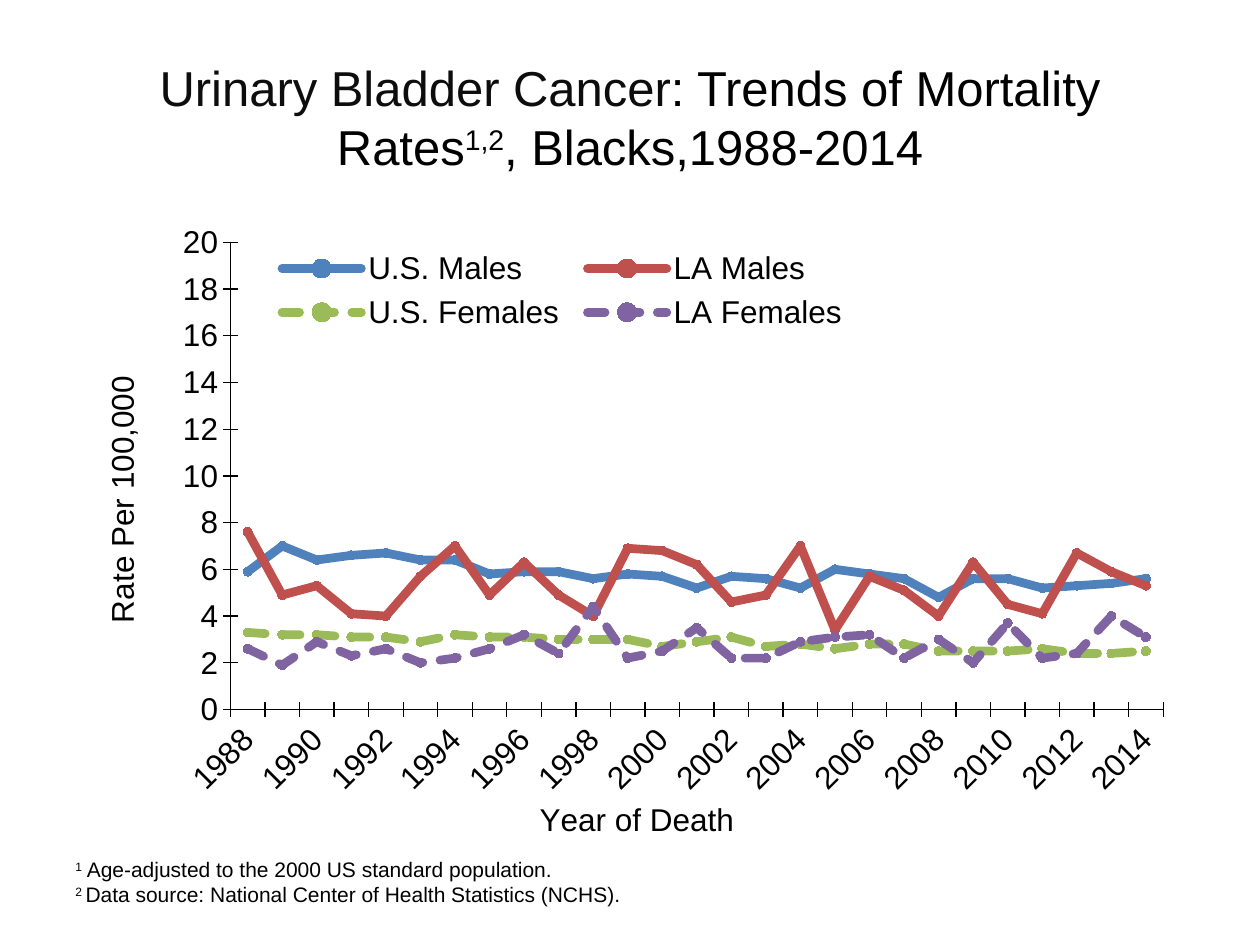
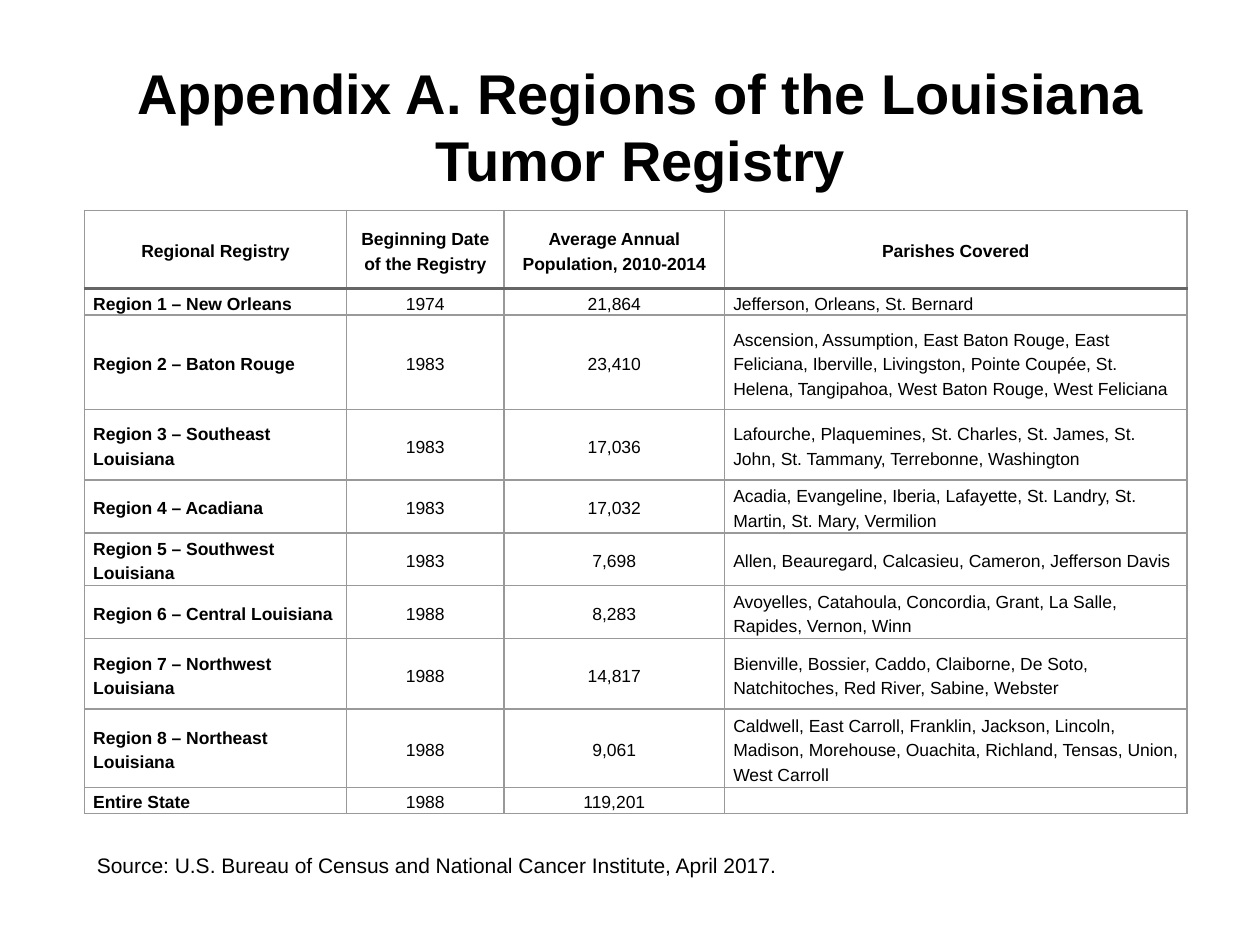
from lxml import etree
from pptx import Presentation
from pptx.chart.data import CategoryChartData
from pptx.dml.color import RGBColor
from pptx.enum.chart import XL_CHART_TYPE, XL_LEGEND_POSITION, XL_MARKER_STYLE, XL_TICK_MARK
from pptx.enum.dml import MSO_LINE
from pptx.enum.text import MSO_ANCHOR, MSO_AUTO_SIZE, PP_ALIGN
from pptx.oxml.ns import qn
from pptx.util import Inches, Pt

LINE_MARKERS = XL_CHART_TYPE.LINE_MARKERS
LEGEND_BOTTOM = XL_LEGEND_POSITION.BOTTOM
CIRCLE = XL_MARKER_STYLE.CIRCLE
CROSS = XL_TICK_MARK.CROSS
DASH = MSO_LINE.SQUARE_DOT
MIDDLE = MSO_ANCHOR.MIDDLE
NO_AUTOFIT = MSO_AUTO_SIZE.NONE
LEFT, CENTER = PP_ALIGN.LEFT, PP_ALIGN.CENTER

FONT = "Arial"
COLORS = {
    "text": "000000",
    "title_lead": "0D0D0D",
    "border": "999999",
    "header_rule": "666666",
    "us_males": "4F81BD",
    "la_males": "C0504D",
    "us_females": "9BBB59",
    "la_females": "8064A2",
}

YEARS = [str(year) for year in range(1988, 2015)]
RATES = [
    ("U.S. Males", "us_males", False,
     [5.9, 7, 6.4, 6.6, 6.7, 6.4, 6.4, 5.8, 5.9, 5.9, 5.6, 5.8, 5.7, 5.2,
      5.7, 5.6, 5.2, 6, 5.8, 5.6, 4.8, 5.6, 5.6, 5.2, 5.3, 5.4, 5.6]),
    ("LA Males", "la_males", False,
     [7.6, 4.9, 5.3, 4.1, 4, 5.7, 7, 4.9, 6.3, 4.9, 4, 6.9, 6.8, 6.2,
      4.6, 4.9, 7, 3.4, 5.7, 5.1, 4, 6.3, 4.5, 4.1, 6.7, 5.9, 5.3]),
    ("U.S. Females", "us_females", True,
     [3.3, 3.2, 3.2, 3.1, 3.1, 2.9, 3.2, 3.1, 3.1, 3, 3, 3, 2.7, 2.9,
      3.1, 2.7, 2.8, 2.6, 2.8, 2.8, 2.5, 2.5, 2.5, 2.6, 2.4, 2.4, 2.5]),
    ("LA Females", "la_females", True,
     [2.6, 1.9, 2.9, 2.3, 2.6, 2, 2.2, 2.6, 3.2, 2.4, 4.4, 2.2, 2.5, 3.5,
      2.2, 2.2, 2.9, 3.1, 3.2, 2.2, 3, 2, 3.7, 2.2, 2.4, 4, 3.1]),
]

COLUMN_WIDTHS = [2.08, 1.25, 1.75, 3.67]
ROW_HEIGHTS = [0.62, 0.21, 0.75, 0.56, 0.42, 0.42, 0.42, 0.56, 0.62, 0.21]
REGISTRIES = [
    ("Regional Registry", "Beginning Date of the Registry",
     "Average Annual Population, 2010-2014", "Parishes Covered"),
    ("Region 1 – New Orleans", "1974", "21,864", "Jefferson, Orleans, St. Bernard"),
    ("Region 2 – Baton Rouge", "1983", "23,410",
     "Ascension, Assumption, East Baton Rouge, East Feliciana, Iberville, Livingston, "
     "Pointe Coupée, St. Helena, Tangipahoa, West Baton Rouge, West Feliciana"),
    ("Region 3 – Southeast Louisiana", "1983", "17,036",
     "Lafourche, Plaquemines, St. Charles, St. James, St. John, St. Tammany, "
     "Terrebonne, Washington"),
    ("Region 4 – Acadiana", "1983", "17,032",
     "Acadia, Evangeline, Iberia, Lafayette, St. Landry, St. Martin, St. Mary, Vermilion"),
    ("Region 5 – Southwest Louisiana", "1983", "7,698",
     "Allen, Beauregard, Calcasieu, Cameron, Jefferson Davis"),
    ("Region 6 – Central Louisiana", "1988", "8,283",
     "Avoyelles, Catahoula, Concordia, Grant, La Salle, Rapides, Vernon, Winn"),
    ("Region 7 – Northwest Louisiana", "1988", "14,817",
     "Bienville, Bossier, Caddo, Claiborne, De Soto, Natchitoches, Red River, Sabine, Webster"),
    ("Region 8 – Northeast Louisiana", "1988", "9,061",
     "Caldwell, East Carroll, Franklin, Jackson, Lincoln, Madison, Morehouse, Ouachita, "
     "Richland, Tensas, Union, West Carroll"),
    ("Entire State", "1988", "119,201", ""),
]


def rgb(name):
    return RGBColor.from_string(COLORS[name])


def style_font(font, size, bold=False, color="text"):
    font.name = FONT
    font.size = Pt(size)
    font.bold = bold
    font.color.rgb = rgb(color)


def add_runs(paragraph, parts, size, bold=False):
    for text, color, raised in parts:
        run = paragraph.add_run()
        run.text = text
        style_font(run.font, size, bold, color)
        if raised:
            run.font._element.set("baseline", "30000")


def set_title(slide, box, parts, size, bold=False):
    title = slide.shapes.title
    title.left, title.top, title.width, title.height = map(Inches, box)
    frame = title.text_frame
    frame.auto_size = NO_AUTOFIT
    frame.vertical_anchor = MIDDLE
    frame.paragraphs[0].alignment = CENTER
    add_runs(frame.paragraphs[0], parts, size, bold)


def add_note(slide, box, lines, line_spacing=1.0):
    frame = slide.shapes.add_textbox(*map(Inches, box)).text_frame
    frame.word_wrap = True
    for index, parts in enumerate(lines):
        paragraph = frame.add_paragraph() if index else frame.paragraphs[0]
        paragraph.line_spacing = line_spacing
        add_runs(paragraph, parts, 12)


def place_chart_part(element, index, x, y, size=None, inner=False):
    for previous in element.findall(qn("c:layout")):
        element.remove(previous)
    layout = etree.Element(qn("c:layout"))
    manual = etree.SubElement(layout, qn("c:manualLayout"))
    settings = [("layoutTarget", "inner")] if inner else []
    settings += [("xMode", "edge"), ("yMode", "edge"), ("x", x), ("y", y)]
    if size:
        settings += [("w", size[0]), ("h", size[1])]
    for name, value in settings:
        etree.SubElement(manual, qn(f"c:{name}")).set("val", str(value))
    element.insert(index, layout)


def format_axis(axis, title, x, y):
    axis.has_major_gridlines = False
    axis.major_tick_mark = CROSS
    axis.format.line.color.rgb = rgb("text")
    axis.format.line.width = Pt(0.75)
    style_font(axis.tick_labels.font, 18)
    frame = axis.axis_title.text_frame
    frame.text = title
    style_font(frame.paragraphs[0].runs[0].font, 18)
    place_chart_part(axis.axis_title._element, 1, x, y)


def format_series(series, color, dashed):
    series.smooth = False
    line = series.format.line
    line.color.rgb = rgb(color)
    line.width = Pt(5)
    if dashed:
        line.dash_style = DASH
    series._element.spPr.find(qn("a:ln")).set("cap", "rnd")
    marker = series.marker
    marker.style = CIRCLE
    marker.size = 5
    marker.format.fill.solid()
    marker.format.fill.fore_color.rgb = rgb(color)
    marker.format.line.color.rgb = rgb(color)


def add_rate_chart(slide, box):
    data = CategoryChartData(number_format="General")
    data.categories = YEARS
    for name, _, _, rates in RATES:
        data.add_series(name, rates)
    chart = slide.shapes.add_chart(LINE_MARKERS, *map(Inches, box), data).chart
    chart.has_title = False
    style_font(chart.font, 18)
    plot = chart.plots[0]
    plot.vary_by_categories = False
    for series, (_, color, dashed, _) in zip(plot.series, RATES):
        format_series(series, color, dashed)

    years, rates = chart.category_axis, chart.value_axis
    format_axis(years, "Year of Death", 0.41, 0.91)
    format_axis(rates, "Rate Per 100,000", 0.02, 0.25)
    rates.minimum_scale, rates.maximum_scale, rates.major_unit = 0, 20, 2
    rates.axis_title.text_frame._txBody.bodyPr.set("rot", "-5400000")
    years._element.find(qn("c:txPr")).find(qn("a:bodyPr")).set("rot", "-2700000")
    label_skip = etree.Element(qn("c:tickLblSkip"))
    label_skip.set("val", "2")
    years._element.find(qn("c:noMultiLvlLbl")).addprevious(label_skip)

    chart.has_legend = True
    legend = chart.legend
    legend.position = LEGEND_BOTTOM
    legend.include_in_layout = False
    style_font(legend.font, 18)
    place_chart_part(legend._element, 1, 0.17, 0.05, (0.53, 0.15))
    plot_area = chart._chartSpace.chart.plotArea
    place_chart_part(plot_area, 0, 0.14, 0.05, (0.83, 0.73), inner=True)


def set_borders(cell, row):
    properties = cell._tc.get_or_add_tcPr()
    for side in "LRTB":
        header_rule = (row, side) in ((0, "B"), (1, "T"))
        line = etree.SubElement(properties, qn(f"a:ln{side}"))
        line.set("w", str(Pt(1.5 if header_rule else 1)))
        fill = etree.SubElement(line, qn("a:solidFill"))
        color = COLORS["header_rule" if header_rule else "border"]
        etree.SubElement(fill, qn("a:srgbClr")).set("val", color)


def fill_cell(cell, text, row, column):
    set_borders(cell, row)
    cell.fill.background()
    cell.vertical_anchor = MIDDLE
    cell.margin_left = cell.margin_right = Inches(0.07)
    cell.margin_top = cell.margin_bottom = 0
    paragraph = cell.text_frame.paragraphs[0]
    paragraph.alignment = CENTER if row == 0 or column in (1, 2) else LEFT
    paragraph.line_spacing = 1.25
    if text:
        add_runs(paragraph, [(text, "text", False)], 10, row == 0 or column == 0)
    else:
        paragraph._p.get_or_add_endParaRPr().set("sz", "1000")


def add_registry_table(slide, box):
    shape = slide.shapes.add_table(len(ROW_HEIGHTS), len(COLUMN_WIDTHS), *map(Inches, box))
    table = shape.table
    table.horz_banding = False
    for column, width in zip(table.columns, COLUMN_WIDTHS):
        column.width = Inches(width)
    for row, height in zip(table.rows, ROW_HEIGHTS):
        row.height = Inches(height)
    for row, texts in enumerate(REGISTRIES):
        for column, text in enumerate(texts):
            fill_cell(table.cell(row, column), text, row, column)


def build_mortality_slide(slide):
    set_title(slide, (0.5, 0.3, 9, 1.25), [
        ("Urinary Bladder Cancer", "title_lead", False),
        (": Trends of Mortality Rates", "text", False),
        ("1,2", "text", True),
        (", Blacks,1988-2014", "text", False),
    ], 28)
    add_note(slide, (0.5, 6.75, 6.17, 0.5), [
        [("1", "text", True),
         (" Age-adjusted to the 2000 US standard population.", "text", False)],
        [("2 ", "text", True),
         ("Data source: National Center of Health Statistics (NCHS).", "text", False)],
    ])
    add_rate_chart(slide, (0.58, 1.67, 8.92, 5.08))


def build_registry_slide(slide):
    title = "Appendix A. Regions of the Louisiana Tumor Registry"
    set_title(slide, (0.42, 0.33, 9.33, 1.33), [(title, "text", False)], 32, True)
    add_registry_table(slide, (0.67, 1.67, sum(COLUMN_WIDTHS), sum(ROW_HEIGHTS)))
    source = "Source: U.S. Bureau of Census and National Cancer Institute, April 2017."
    add_note(slide, (0.67, 6.67, 5.83, 0.35), [[(source, "text", False)]], 1.25)


def main():
    presentation = Presentation()
    presentation.slide_width = Inches(10)
    presentation.slide_height = Inches(7.5)
    title_only = presentation.slide_layouts[5]
    for build_slide in (build_mortality_slide, build_registry_slide):
        build_slide(presentation.slides.add_slide(title_only))
    presentation.save("out.pptx")


if __name__ == "__main__":
    main()
